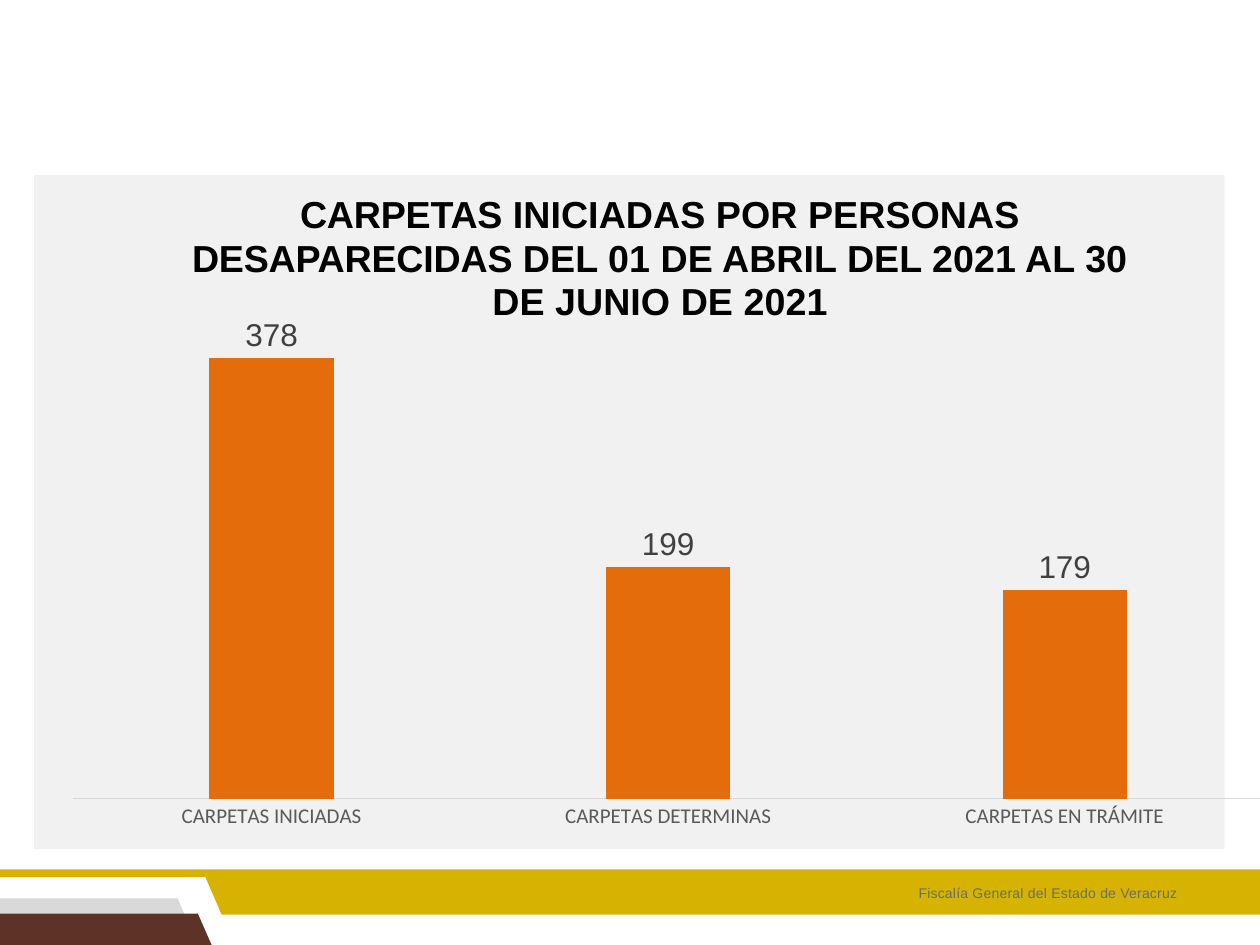
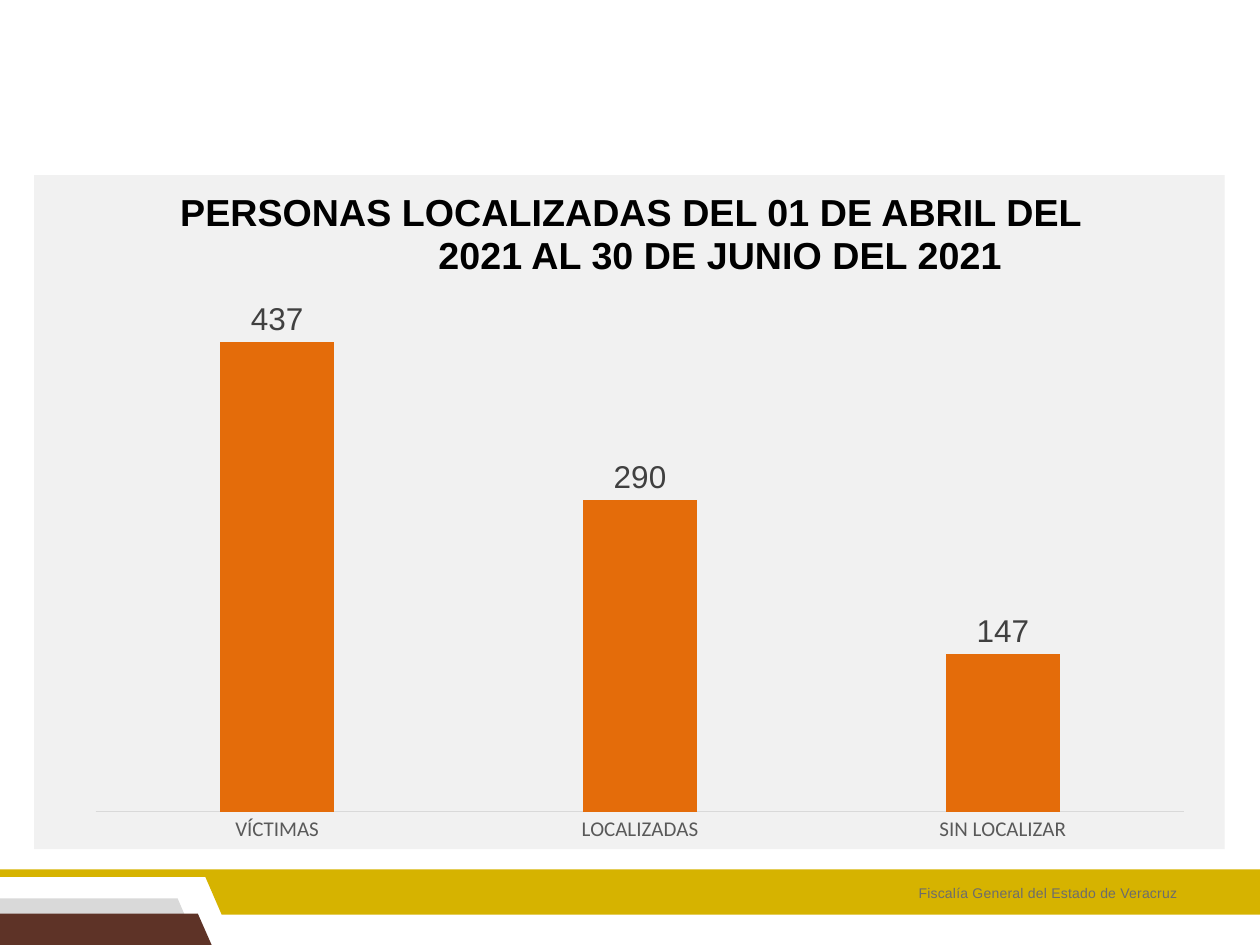
import pptx
import pptx.util
import pptx.chart.data
import pptx.dml.color
import pptx.enum.chart
import pptx.enum.shapes
import pptx.enum.text
import lxml.etree

Inches = pptx.util.Inches
Pt = pptx.util.Pt
Align = pptx.enum.text.PP_ALIGN

COLORS = {
    "gray_tab": "D9D9D9",
    "brown_tab": "5E3327",
    "gold_band": "D6B300",
    "panel": "F1F1F1",
    "bar": "E46C0A",
    "title": "000000",
    "footer": "6C6C6C",
    "category": "595959",
    "value": "404040",
    "axis": "D9D9D9",
}
TITLE_FONT = {"name": "Arial", "size": Pt(21.5), "bold": True}
FOOTER_FONT = {"name": "Arial", "size": Pt(8)}
CATEGORY_FONT = {"name": "Calibri", "size": Pt(12)}
VALUE_FONT = {"name": "Arial", "size": Pt(18)}
FRAME = {
    "margin_left": 0,
    "margin_right": 0,
    "margin_bottom": 0,
    "word_wrap": True,
    "vertical_anchor": pptx.enum.text.MSO_ANCHOR.TOP,
    "auto_size": pptx.enum.text.MSO_AUTO_SIZE.SHAPE_TO_FIT_TEXT,
}
BANDS = [
    ("gray_tab", [(141, 713), (0, 713), (0, 741), (153, 741)]),
    ("brown_tab", [(157, 725), (0, 725), (0, 750), (168, 750)]),
    ("gold_band", [(1000, 690), (0, 690), (0, 696), (163, 696), (176, 726), (1000, 726)]),
]
FOOTER = "Fiscalía General del Estado de Veracruz"
REPORTS = [
    {
        "title": [
            ("CARPETAS ", -0.1),
            ("INICIADAS POR PERSONAS ", 0.05),
            ("DESAPARECIDAS ", -0.1),
            ("DEL 01 DE ABRIL DEL 2021 AL 30 DE JUNIO DE 2021", 0.05),
        ],
        "title_box": (1.5, 1.49, 7.47, 1.09),
        "align": Align.CENTER,
        "indent": (0.01, 0),
        "chart_box": (0.28, 2.5, 9.75, 4.29),
        "plot": {"x": 0.031, "y": 0.032, "w": 0.969, "h": 0.863},
        "counts": {"CARPETAS INICIADAS": 378, "CARPETAS DETERMINAS": 199, "CARPETAS EN TRÁMITE": 179},
        "maximum": 400,
    },
    {
        "title": [("PERSONAS LOCALIZADAS DEL 01 DE ABRIL DEL 2021 AL 30 DE JUNIO DEL 2021", 0.05)],
        "title_box": (1.42, 1.47, 7.5, 0.74),
        "align": Align.LEFT,
        "indent": (2.06, -2.05),
        "chart_box": (0.58, 2.08, 9, 4.69),
        "plot": {"x": 0.02, "y": 0.021, "w": 0.96, "h": 0.909},
        "counts": {"VÍCTIMAS": 437, "LOCALIZADAS": 290, "SIN LOCALIZAR": 147},
        "maximum": 500,
    },
]


def style(target, values, color=None):
    for key, value in values.items():
        setattr(target, key, value)
    if color:
        target.color.rgb = pptx.dml.color.RGBColor.from_string(COLORS[color])


def write(paragraph, pieces, font, color, indent):
    for text, spacing in pieces:
        run = paragraph.add_run()
        run.text = text
        style(run.font, font, color)
        run._r.get_or_add_rPr().set("spc", str(round(spacing * 100)))
    properties = paragraph._p.get_or_add_pPr()
    for key, length in zip(("marL", "indent"), indent):
        properties.set(key, str(Inches(length)))


deck = pptx.Presentation()
deck.slide_width = Inches(10)
deck.slide_height = Inches(7.5)
layout = deck.slide_layouts.get_by_name("Title Only")
slides = [deck.slides.add_slide(layout) for report in REPORTS]

backdrop = []
for color, points in BANDS:
    outline = slides[0].shapes.build_freeform(*points[0], scale=Inches(0.01))
    outline.add_line_segments(points[1:], close=True)
    backdrop.append((color, outline.convert_to_shape()))
panel = slides[0].shapes.add_shape(
    pptx.enum.shapes.MSO_SHAPE.RECTANGLE, *map(Inches, (0.27, 1.39, 9.45, 5.35))
)
backdrop.append(("panel", panel))
for color, part in backdrop:
    part.shadow.inherit = False
    part.fill.solid()
    part.fill.fore_color.rgb = pptx.dml.color.RGBColor.from_string(COLORS[color])
    part.line.fill.background()
    layout.shapes.element.append(part.element)

for slide, report in zip(slides, REPORTS):
    footer = slide.shapes.add_textbox(*map(Inches, (7.28, 7.01, 2.09, 0.16)))
    style(footer.text_frame, FRAME | {"margin_top": Inches(0.01)})
    write(footer.text_frame.paragraphs[0], [(FOOTER, 0.1)], FOOTER_FONT, "footer", (0.01, 0))

    title = slide.shapes.title
    style(title, dict(zip(("left", "top", "width", "height"), map(Inches, report["title_box"]))))
    style(title.text_frame, FRAME | {"margin_top": Inches(0.04)})
    heading = title.text_frame.paragraphs[0]
    style(heading, {"alignment": report["align"], "line_spacing": Pt(24.8)})
    write(heading, report["title"], TITLE_FONT, "title", report["indent"])

    data = pptx.chart.data.CategoryChartData()
    data.categories = list(report["counts"])
    data.add_series("Series 1", list(report["counts"].values()))
    chart = slide.shapes.add_chart(
        pptx.enum.chart.XL_CHART_TYPE.COLUMN_CLUSTERED, *map(Inches, report["chart_box"]), data
    ).chart
    style(chart, {"has_title": False, "has_legend": False})
    style(chart.font, {"name": "Calibri", "size": Pt(10)}, "title")

    counts = chart.value_axis
    style(counts, {
        "visible": False,
        "has_major_gridlines": False,
        "minimum_scale": 0,
        "maximum_scale": report["maximum"],
    })
    categories = chart.category_axis
    categories.major_tick_mark = pptx.enum.chart.XL_TICK_MARK.NONE
    style(categories.tick_labels.font, CATEGORY_FONT, "category")
    style(categories.format.line, {"width": Pt(0.75)}, "axis")

    columns = chart.plots[0]
    style(columns, {"gap_width": 219, "overlap": -27, "vary_by_categories": False})
    bars = columns.series[0]
    bars.format.fill.solid()
    bars.format.fill.fore_color.rgb = pptx.dml.color.RGBColor.from_string(COLORS["bar"])
    style(bars.data_labels, {
        "show_value": True,
        "position": pptx.enum.chart.XL_LABEL_POSITION.OUTSIDE_END,
    })
    style(bars.data_labels.font, VALUE_FONT, "value")

    plot_area = chart.element.chart.plotArea
    namespace = lxml.etree.QName(plot_area).namespace
    for stale in plot_area.findall(f"{{{namespace}}}layout"):
        plot_area.remove(stale)
    plot_layout = lxml.etree.Element(f"{{{namespace}}}layout")
    manual = lxml.etree.SubElement(plot_layout, f"{{{namespace}}}manualLayout")
    settings = {"layoutTarget": "inner", "xMode": "edge", "yMode": "edge"} | report["plot"]
    for key, value in settings.items():
        lxml.etree.SubElement(manual, f"{{{namespace}}}{key}").set("val", str(value))
    plot_area.insert(0, plot_layout)

deck.save("out.pptx")
